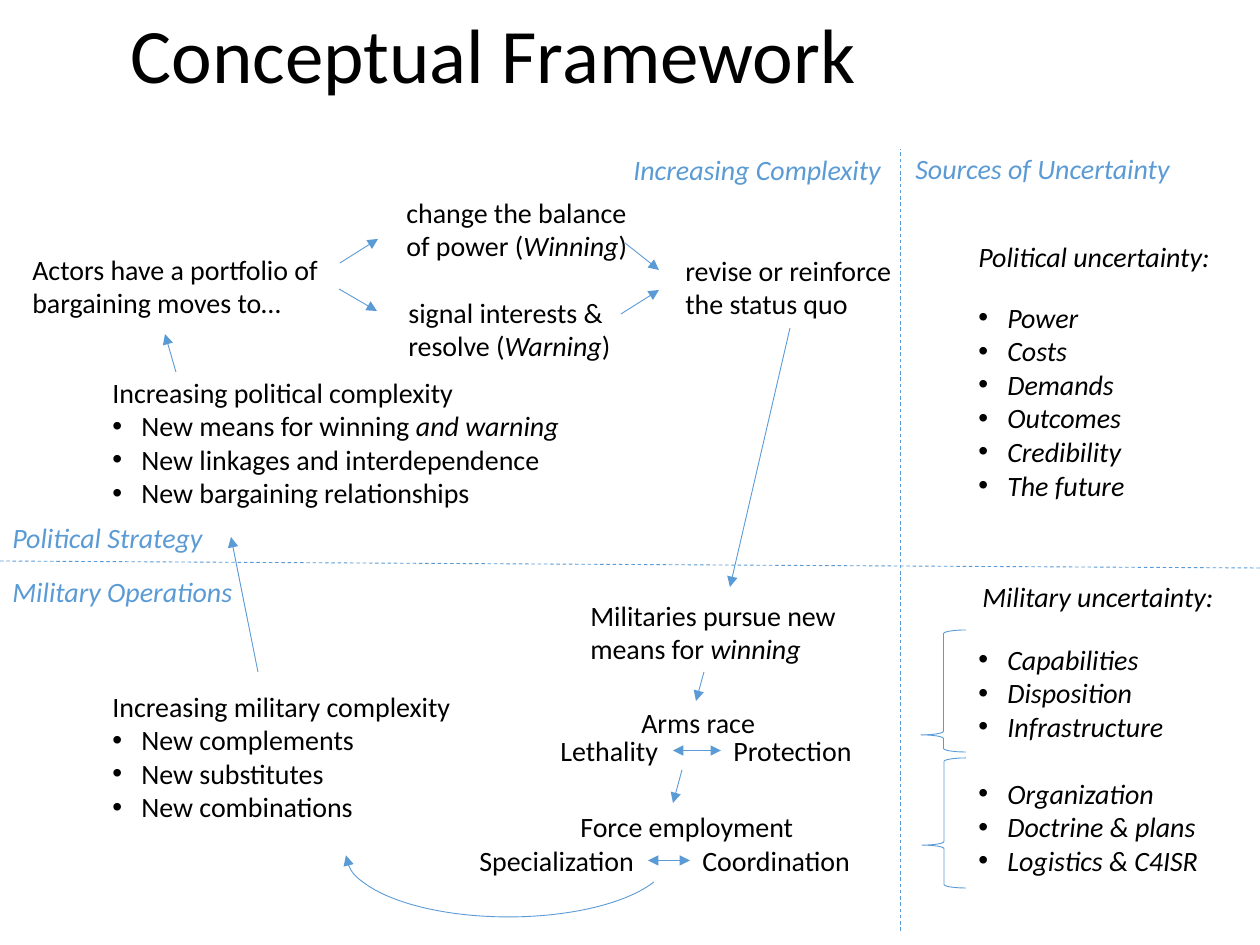
"""Build the Conceptual Framework slide with its flow of arrows and uncertainty lists."""
from lxml.etree import SubElement
from pptx import Presentation
from pptx.dml.color import RGBColor
from pptx.enum.dml import MSO_LINE
from pptx.enum.shapes import MSO_CONNECTOR, MSO_SHAPE
from pptx.enum.text import MSO_ANCHOR, MSO_AUTO_SIZE, PP_ALIGN
from pptx.oxml.ns import qn
from pptx.util import Inches, Pt

BLACK = RGBColor(0x00, 0x00, 0x00)
BLUE = RGBColor(0x5B, 0x9B, 0xD5)
SCALE = Inches(10) / 1260
BULLET_INDENT = 29
BOTTOM, LEFT, RIGHT = 2, 1, 3


def emu(*lengths):
    return [round(length * SCALE) for length in lengths]


def style_line(shape, ends=(), dashed=False):
    shape.line.color.rgb = BLUE
    shape.line.width = Pt(0.5)
    if dashed:
        shape.line.dash_style = MSO_LINE.DASH
    outline = shape.line._get_or_add_ln()
    for end in ends:
        SubElement(outline, qn(f"a:{end}"), type="triangle")
    SubElement(shape._element.spPr, qn("a:effectLst"))


presentation = Presentation()
presentation.slide_width, presentation.slide_height = emu(1260, 945)
slide = presentation.slides.add_slide(presentation.slide_layouts[5])

title = slide.shapes.title
title.left, title.top, title.width, title.height = emu(118, 0, 1028, 117)
title.text_frame.text = "Conceptual Framework"
title.text_frame.auto_size = MSO_AUTO_SIZE.NONE
title.text_frame.vertical_anchor = MSO_ANCHOR.MIDDLE
paragraph = title.text_frame.paragraphs[0]
paragraph.alignment = PP_ALIGN.LEFT
paragraph.line_spacing = 0.9
paragraph.font.name = "Calibri"
paragraph.font.size = Pt(44)
paragraph.font.color.rgb = BLACK

# left, top, width, height, wrap, colour, lines; asterisks enclose italics, "•" starts a bullet
texts = [
    (20, 246, 316, 81, True, BLACK, ["Actors have a portfolio of bargaining moves to…"]),
    (673, 247, 234, 81, True, BLACK, ["revise or reinforce the status quo"]),
    (394, 189, 248, 81, True, BLACK, ["change the balance of power (*Winning*)"]),
    (396, 289, 278, 81, True, BLACK, ["signal interests & resolve (*Warning*)"]),
    (100, 683, 384, 149, True, BLACK, ["Increasing military complexity", "•New complements",
                                       "•New substitutes", "•New combinations"]),
    (578, 592, 287, 81, True, BLACK, ["Militaries pursue new means for *winning*"]),
    (548, 727, 125, 47, False, BLACK, ["Lethality"]),
    (721, 727, 145, 47, False, BLACK, ["Protection"]),
    (467, 837, 181, 47, False, BLACK, ["Specialization"]),
    (690, 837, 175, 47, False, BLACK, ["Coordination"]),
    (0, 514, 218, 47, False, BLUE, ["*Political Strategy*"]),
    (0, 568, 248, 47, False, BLUE, ["*Military Operations*"]),
    (100, 369, 481, 152, True, BLACK, ["Increasing political complexity",
                                       "•New means for winning *and warning*",
                                       "•New linkages and interdependence",
                                       "•New bargaining relationships"]),
    (966, 636, 248, 251, False, BLACK, ["•*Capabilities*", "•*Disposition*", "•*Infrastructure*",
                                        "•*Organization*", "•*Doctrine & plans*",
                                        "•*Logistics & C4ISR*"]),
    (966, 294, 174, 217, False, BLACK, ["•*Power*", "•*Costs*", "•*Demands*", "•*Outcomes*",
                                        "•*Credibility*", "•*The future*"]),
    (966, 233, 294, 47, True, BLACK, ["*Political uncertainty:*"]),
    (970, 573, 290, 47, True, BLACK, ["*Military uncertainty:*"]),
    (621, 146, 276, 47, False, BLUE, ["*Increasing Complexity*"]),
    (903, 145, 284, 47, False, BLUE, ["*Sources of Uncertainty*"]),
    (629, 699, 141, 47, False, BLACK, ["Arms race"]),
    (568, 803, 242, 47, False, BLACK, ["Force employment"]),
]
boxes = {}
for left, top, width, height, wrap, color, lines in texts:
    box = slide.shapes.add_textbox(*emu(left, top, width, height))
    boxes[lines[0]] = box
    frame = box.text_frame
    frame.word_wrap = wrap
    frame.auto_size = MSO_AUTO_SIZE.SHAPE_TO_FIT_TEXT
    for number, line in enumerate(lines):
        paragraph = frame.add_paragraph() if number else frame.paragraphs[0]
        paragraph.font.name = "Calibri"
        paragraph.font.size = Pt(16)
        paragraph.font.color.rgb = color
        if line == "•*Organization*":
            paragraph.space_before = Pt(19)
        if line.startswith("•"):
            properties = paragraph._p.get_or_add_pPr()
            indent = emu(BULLET_INDENT)[0]
            properties.set("marL", str(indent))
            properties.set("indent", str(-indent))
            bullet_font = SubElement(properties, qn("a:buFont"), typeface="Arial")
            bullet = SubElement(properties, qn("a:buChar"), char="•")
            defaults = properties.find(qn("a:defRPr"))
            defaults.addprevious(bullet_font)
            defaults.addprevious(bullet)
        for position, part in enumerate(line.removeprefix("•").split("*")):
            if part:
                run = paragraph.add_run()
                run.text = part
                run.font.italic = position % 2 == 1

arrows = [
    (339, 289, 377, 311), (340, 263, 378, 239), (704, 672, 696, 701),
    (625, 243, 659, 270), (621, 314, 659, 290), (682, 770, 673, 803),
    (176, 372, 165, 334), (258, 672, 231, 537),
]
for points in arrows:
    arrow = slide.shapes.add_connector(MSO_CONNECTOR.STRAIGHT, *emu(*points))
    style_line(arrow, ["tailEnd"])

for points in [(0, 561, 1260, 568), (900, 931, 900, 149)]:
    divider = slide.shapes.add_connector(MSO_CONNECTOR.STRAIGHT, *emu(*points))
    style_line(divider, dashed=True)

status_arrow = slide.shapes.add_connector(MSO_CONNECTOR.STRAIGHT, *emu(790, 328, 730, 587))
status_arrow.begin_connect(boxes["revise or reinforce the status quo"], BOTTOM)
style_line(status_arrow, ["tailEnd"])

for first, second in [("Lethality", "Protection"), ("Specialization", "Coordination")]:
    exchange = slide.shapes.add_connector(MSO_CONNECTOR.STRAIGHT, 0, 0, 0, 0)
    exchange.begin_connect(boxes[first], RIGHT)
    exchange.end_connect(boxes[second], LEFT)
    style_line(exchange, ["headEnd", "tailEnd"])

curves = [
    (MSO_SHAPE.ARC, (346, 791, 325, 126), (6.54, 107.71), ["tailEnd"]),
    (MSO_SHAPE.LEFT_BRACE, (921, 630, 45, 122), (0.08, 0.86), []),
    (MSO_SHAPE.LEFT_BRACE, (922, 758, 44, 130), (0.08, 0.67), []),
]
for kind, bounds, adjustments, ends in curves:
    curve = slide.shapes.add_shape(kind, *emu(*bounds))
    for number, value in enumerate(adjustments):
        curve.adjustments[number] = value
    curve.fill.background()
    style_line(curve, ends)

presentation.save("out.pptx")
